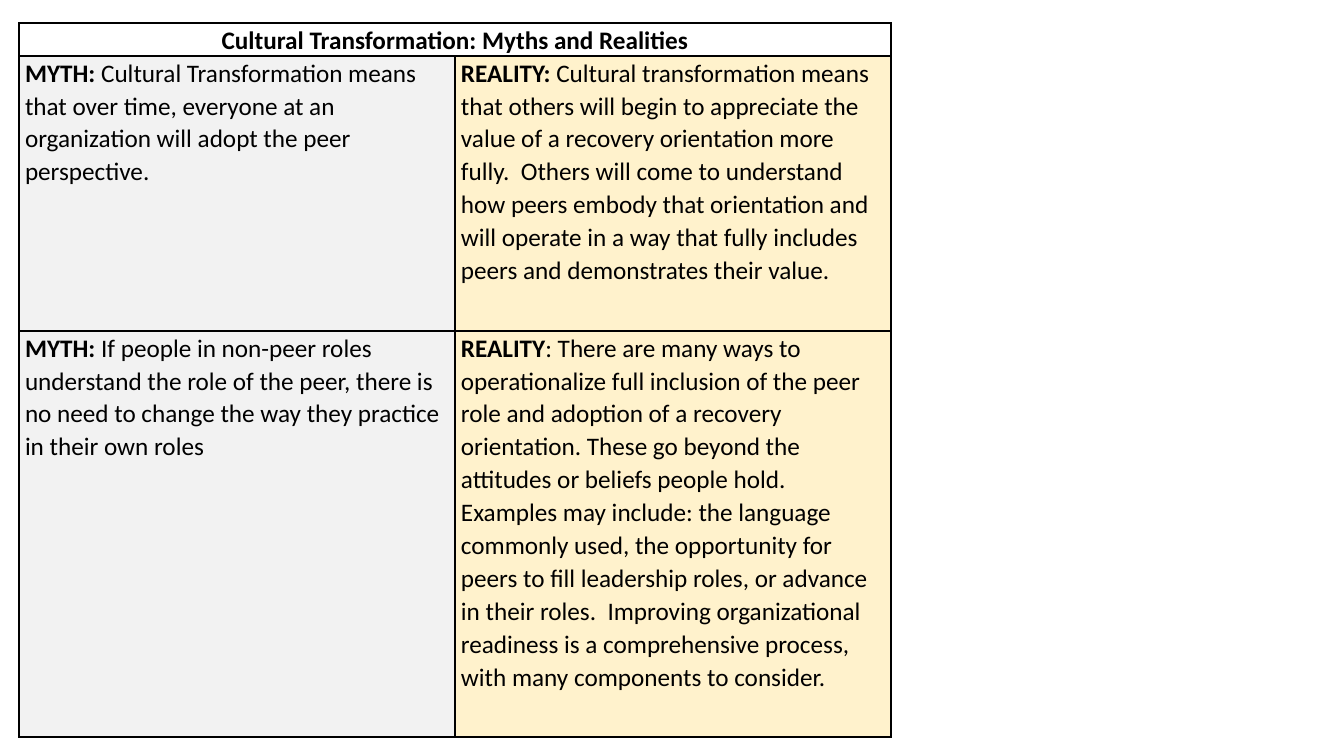
from dataclasses import dataclass

from pptx import Presentation
from pptx.dml.color import RGBColor
from pptx.enum.text import PP_ALIGN
from pptx.oxml.ns import qn
from pptx.util import Pt
from lxml import etree

CENTER, LEFT = PP_ALIGN.CENTER, PP_ALIGN.LEFT
PX = 914400 / 100.8  # EMU in one px
BLANK_LAYOUT = 6


@dataclass(frozen=True)
class Theme:
    font: str = "Calibri"
    size: int = 18
    line_spacing: float = 1.07
    text: str = "000000"
    border: str = "000000"
    myth: str = "F2F2F2"
    reality: str = "FFF2CC"


THEME = Theme()

TITLE = "Cultural Transformation: Myths and Realities"

# Each cell is a bold lead and the statement that follows it
STATEMENTS = [
    (("MYTH:", " Cultural Transformation means that over time, everyone at an "
      "organization will adopt the peer perspective."),
     ("REALITY:", " Cultural transformation means that others will begin to "
      "appreciate the value of a recovery orientation more fully.  Others will "
      "come to understand how peers embody that orientation and will operate in "
      "a way that fully includes peers and demonstrates their value.")),
    (("MYTH:", " If people in non-peer roles understand the role of the peer, "
      "there is no need to change the way they practice in their own roles"),
     ("REALITY", ": There are many ways to operationalize full inclusion of the "
      "peer role and adoption of a recovery orientation. These go beyond the "
      "attitudes or beliefs people hold.  Examples may include: the language "
      "commonly used, the opportunity for peers to fill leadership roles, or "
      "advance in their roles.  Improving organizational readiness is a "
      "comprehensive process, with many components to consider.")),
]


def px(n):
    return round(n * PX)


def add_run(p, text, *, bold=False):
    r = p.add_run()
    r.text = text
    r.font.name = THEME.font
    r.font.size = Pt(THEME.size)
    r.font.bold = bold
    r.font.color.rgb = RGBColor.from_string(THEME.text)


def add_borders(cell):
    tc_pr = cell._tc.get_or_add_tcPr()
    for side in ("lnL", "lnR", "lnT", "lnB"):
        line = etree.SubElement(tc_pr, qn(f"a:{side}"), w=str(Pt(1)))
        fill = etree.SubElement(line, qn("a:solidFill"))
        etree.SubElement(fill, qn("a:srgbClr"), val=THEME.border)


def format_cell(cell, fill=None):
    cell.margin_left = cell.margin_right = px(6)
    cell.margin_top = cell.margin_bottom = 0
    add_borders(cell)  # borders come before the fill in the cell XML
    if fill:
        cell.fill.solid()
        cell.fill.fore_color.rgb = RGBColor.from_string(fill)
    else:
        cell.fill.background()


def write_cell(cell, lead, statement="", *, align=LEFT):
    p = cell.text_frame.paragraphs[0]
    p.alignment = align
    p.line_spacing = THEME.line_spacing
    add_run(p, lead, bold=True)
    if statement:
        add_run(p, statement)


def add_grid(s, left, top, widths, heights):
    frame = s.shapes.add_table(len(heights), len(widths), px(left), px(top),
                               px(sum(widths)), px(sum(heights)))
    table = frame.table
    table.first_row = table.horz_banding = False
    for column, width in zip(table.columns, widths):
        column.width = px(width)
    for row, height in zip(table.rows, heights):
        row.height = px(height)
    return table


def main():
    prs = Presentation()
    prs.slide_width, prs.slide_height = px(1344), px(756)
    s = prs.slides.add_slide(prs.slide_layouts[BLANK_LAYOUT])
    table = add_grid(s, 19, 23, [436, 436], [33, 275, 406])

    # Heading across both columns
    heading = table.cell(0, 0)
    heading.merge(table.cell(0, 1))
    for cell in table.rows[0].cells:
        format_cell(cell)
    write_cell(heading, TITLE, align=CENTER)

    # Myths on the left, realities on the right
    for row, pair in enumerate(STATEMENTS, start=1):
        for col, fill in enumerate((THEME.myth, THEME.reality)):
            cell = table.cell(row, col)
            format_cell(cell, fill)
            write_cell(cell, *pair[col])

    prs.save("out.pptx")


if __name__ == "__main__":
    main()
